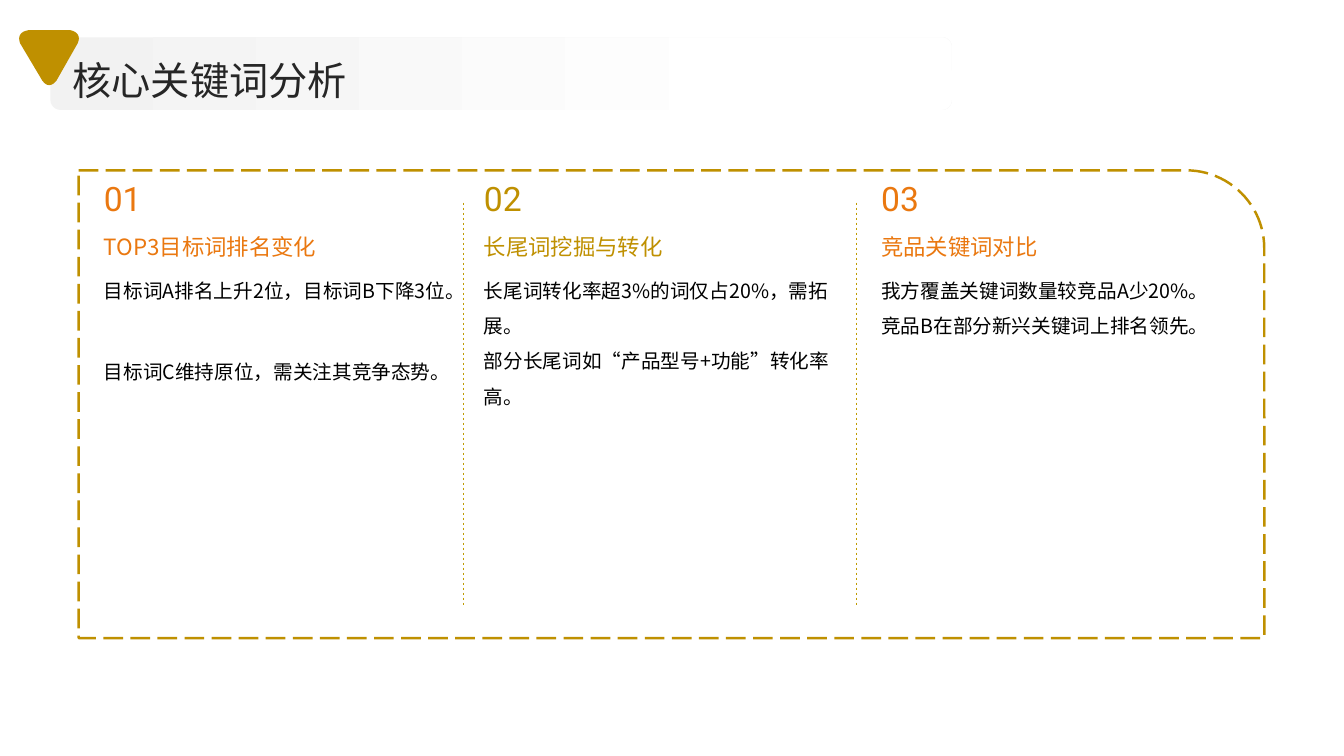
from lxml import etree
from pptx import Presentation
from pptx.dml.color import RGBColor
from pptx.enum.dml import MSO_LINE
from pptx.enum.shapes import MSO_CONNECTOR, MSO_SHAPE
from pptx.enum.text import MSO_ANCHOR, MSO_AUTO_SIZE, PP_ALIGN
from pptx.oxml.ns import qn
from pptx.util import Inches, Pt

ROUND_RECT = MSO_SHAPE.ROUNDED_RECTANGLE
ONE_ROUND_CORNER = MSO_SHAPE.ROUND_1_RECTANGLE
STRAIGHT = MSO_CONNECTOR.STRAIGHT
LONG_DASH, DASH = MSO_LINE.LONG_DASH, MSO_LINE.DASH
TOP, MIDDLE = MSO_ANCHOR.TOP, MSO_ANCHOR.MIDDLE
LEFT = PP_ALIGN.LEFT
NO_AUTOFIT = MSO_AUTO_SIZE.NONE

CJK_FONT, NUMBER_FONT = "Noto Sans CJK SC", "Roboto"
COLORS = {
    "gold": "BF9000",
    "orange": "EA7810",
    "divider": "BF9B00",
    "title": "262626",
    "body": "000000",
    "panel": "FFFFFF",
    "band_start": "F2F2F2",
    "band_end": "FFFFFF",
}
COLUMNS = [
    (1.03, 3.43, "orange", "01", "TOP3目标词排名变化",
     ["目标词A排名上升2位，目标词B下降3位。", "目标词C维持原位，需关注其竞争态势。"]),
    (4.8, 3.58, "gold", "02", "长尾词挖掘与转化",
     ["长尾词转化率超3%的词仅占20%，需拓展。", "部分长尾词如“产品型号+功能”转化率高。"]),
    (8.74, 3.56, "orange", "03", "竞品关键词对比",
     ["我方覆盖关键词数量较竞品A少20%。", "竞品B在部分新兴关键词上排名领先。"]),
]
DIVIDERS = [4.6, 8.49]
MARKER_START = (0.28, 0.3)
MARKER_SIDES = [
    [(0.7, 0.3), (0.7, 0.3), (0.82, 0.32), (0.77, 0.43)],
    [(0.56, 0.8), (0.56, 0.8), (0.49, 0.9), (0.42, 0.8)],
    [(0.2, 0.43), (0.2, 0.43), (0.15, 0.32), (0.28, 0.3)],
]
CURVE_STEPS = 12


def rgb(key):
    """Return the named colour."""
    return RGBColor.from_string(COLORS[key])


def fill_text(frame, lines, size, color, font=CJK_FONT, spacing=1.0, anchor=MIDDLE):
    """Write lines into one left-aligned paragraph of a frame without insets."""
    frame.word_wrap = True
    frame.auto_size = NO_AUTOFIT
    frame.vertical_anchor = anchor
    frame.margin_left = frame.margin_right = frame.margin_top = frame.margin_bottom = 0
    paragraph = frame.paragraphs[0]
    paragraph.alignment = LEFT
    paragraph.line_spacing = spacing
    for index, line in enumerate(lines):
        if index:
            paragraph.add_line_break()
        run = paragraph.add_run()
        run.text = line
        run.font.size = Pt(size)
        run.font.name = font
        run.font.color.rgb = rgb(color)
        east_asian = etree.SubElement(run.font._element, qn("a:ea"))
        east_asian.set("typeface", font)


def add_text(slide, left, top, width, height, lines, size, color, **style):
    """Add a text box."""
    box = slide.shapes.add_textbox(Inches(left), Inches(top), Inches(width), Inches(height))
    fill_text(box.text_frame, lines, size, color, **style)


def add_panel(slide):
    """Add the dashed frame around the columns."""
    panel = slide.shapes.add_shape(
        ONE_ROUND_CORNER, Inches(0.78), Inches(1.69), Inches(11.76), Inches(4.64))
    panel.shadow.inherit = False
    panel.fill.solid()
    panel.fill.fore_color.rgb = rgb("panel")
    panel.line.color.rgb = rgb("gold")
    panel.line.width = Pt(1.75)
    panel.line.dash_style = LONG_DASH


def add_column(slide, left, width, accent, number, heading, points):
    """Add one column: heading, points and number."""
    add_text(slide, left, 2.22, width, 0.42, [heading], 16, accent, spacing=1.1)
    add_text(slide, left, 2.65, width, 3.46, points, 14, "body", spacing=1.5, anchor=TOP)
    add_text(slide, left, 1.77, 0.74, 0.4, [number], 24, accent, font=NUMBER_FONT)


def add_divider(slide, x):
    """Add a thin dashed vertical line between columns."""
    divider = slide.shapes.add_connector(STRAIGHT, Inches(x), Inches(2.01), Inches(x), Inches(6.01))
    divider.line.color.rgb = rgb("divider")
    divider.line.width = Pt(0.5)
    divider.line.dash_style = DASH
    etree.SubElement(divider._element.spPr, qn("a:effectLst"))


def add_title_band(slide):
    """Add the fading band behind the title."""
    band = slide.shapes.add_shape(
        ROUND_RECT, Inches(0.5), Inches(0.37), Inches(8.94), Inches(0.72))
    band.shadow.inherit = False
    band.adjustments[0] = 0.14
    band.line.fill.background()
    band.fill.gradient()
    band.fill.gradient_angle = 0
    stops = zip(band.fill.gradient_stops, [(0, "band_start"), (0.8, "band_end")])
    for stop, (position, color) in stops:
        stop.position = position
        stop.color.rgb = rgb(color)


def set_title(slide, text):
    """Place the title in front of its band and format it."""
    title = slide.shapes.title
    title.left, title.top = Inches(0.72), Inches(0.51)
    title.width, title.height = Inches(11.67), Inches(0.51)
    fill_text(title.text_frame, [text], 28, "title", spacing=1.1)
    slide.shapes._spTree.append(title._element)


def curve_point(controls, t):
    """Return the point at t on a cubic curve, in slide units."""
    weights = ((1 - t) ** 3, 3 * t * (1 - t) ** 2, 3 * t * t * (1 - t), t ** 3)
    return tuple(
        Inches(sum(weight * point[axis] for weight, point in zip(weights, controls)))
        for axis in (0, 1))


def add_marker(slide):
    """Add the triangle with rounded corners beside the title."""
    builder = slide.shapes.build_freeform(*(Inches(value) for value in MARKER_START))
    for controls in MARKER_SIDES:
        corner = [curve_point(controls, step / CURVE_STEPS) for step in range(CURVE_STEPS + 1)]
        builder.add_line_segments(corner, close=False)
    builder.add_line_segments([], close=True)
    marker = builder.convert_to_shape()
    marker.shadow.inherit = False
    marker.fill.solid()
    marker.fill.fore_color.rgb = rgb("gold")
    marker.line.fill.background()


def main():
    """Build the keyword analysis slide."""
    deck = Presentation()
    deck.slide_width, deck.slide_height = Inches(13.33), Inches(7.5)
    slide = deck.slides.add_slide(deck.slide_layouts[5])
    add_panel(slide)
    for column in COLUMNS:
        add_column(slide, *column)
    for x in DIVIDERS:
        add_divider(slide, x)
    add_title_band(slide)
    set_title(slide, "核心关键词分析")
    add_marker(slide)
    deck.save("out.pptx")


if __name__ == "__main__":
    main()
